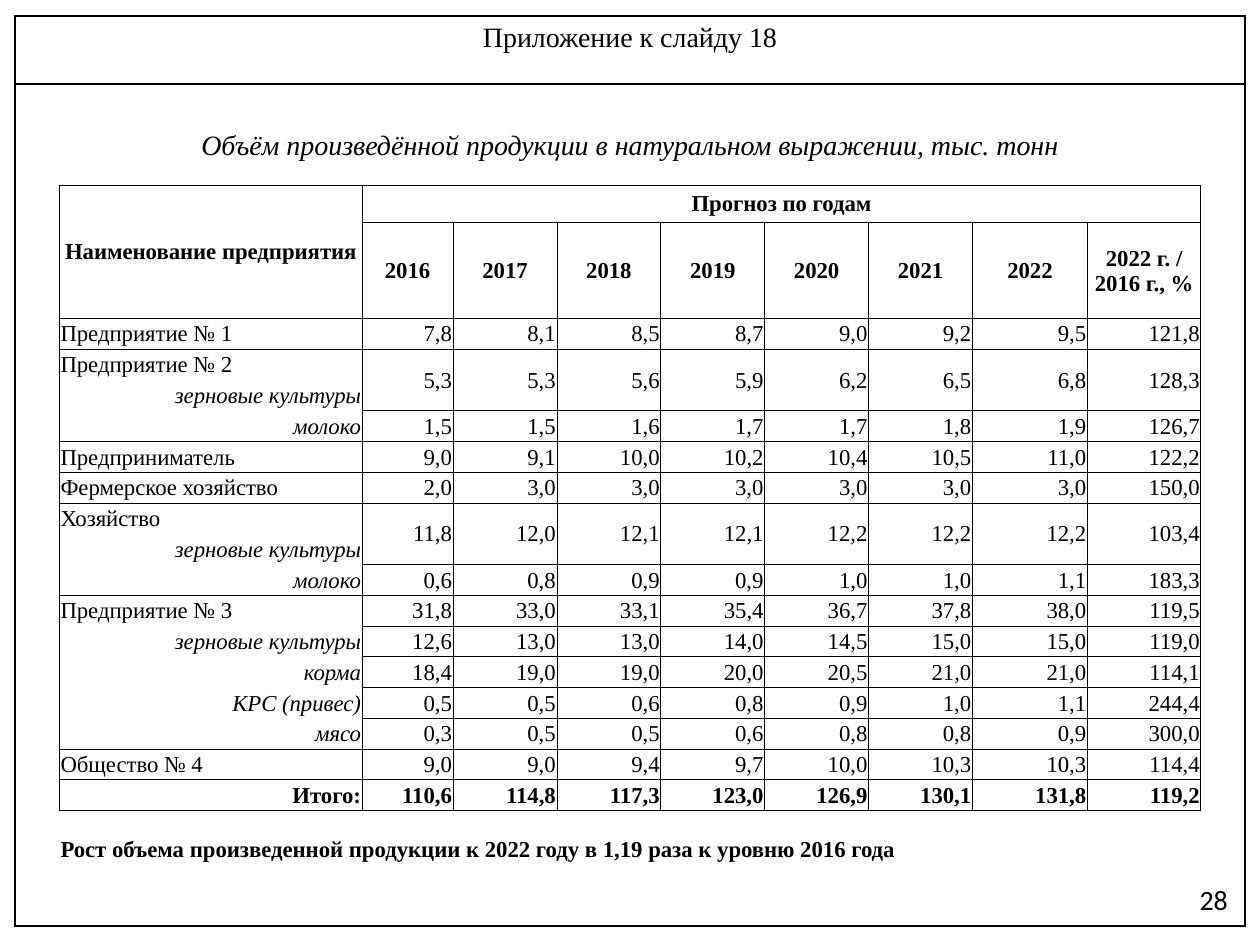
from lxml import etree
from pptx import Presentation
from pptx.dml.color import RGBColor
from pptx.enum.text import MSO_ANCHOR, PP_ALIGN
from pptx.oxml.ns import qn
from pptx.util import Pt

LEFT, MID, RIGHT = PP_ALIGN.LEFT, PP_ALIGN.CENTER, PP_ALIGN.RIGHT
TOP, CENTRE = MSO_ANCHOR.TOP, MSO_ANCHOR.MIDDLE
COLORS = {"ink": "000000"}
SERIF, SANS = "Times New Roman", "Calibri"

HEAD = "Приложение к слайду 18"
TITLE = "Объём произведённой продукции в натуральном выражении, тыс. тонн"
NAME = "Наименование предприятия"
SPAN = "Прогноз по годам"
YEARS = ["2016", "2017", "2018", "2019", "2020", "2021", "2022",
         "2022 г. / 2016 г., %"]
# Each firm: its name, its own values, then (product, values).
# A firm that shares the values of its first product has none of its own.
FIRMS = [
    ("Предприятие № 1", "7,8 8,1 8,5 8,7 9,0 9,2 9,5 121,8", []),
    ("Предприятие № 2", "", [
        ("зерновые культуры", "5,3 5,3 5,6 5,9 6,2 6,5 6,8 128,3"),
        ("молоко", "1,5 1,5 1,6 1,7 1,7 1,8 1,9 126,7")]),
    ("Предприниматель", "9,0 9,1 10,0 10,2 10,4 10,5 11,0 122,2", []),
    ("Фермерское хозяйство", "2,0 3,0 3,0 3,0 3,0 3,0 3,0 150,0", []),
    ("Хозяйство", "", [
        ("зерновые культуры", "11,8 12,0 12,1 12,1 12,2 12,2 12,2 103,4"),
        ("молоко", "0,6 0,8 0,9 0,9 1,0 1,0 1,1 183,3")]),
    ("Предприятие № 3", "31,8 33,0 33,1 35,4 36,7 37,8 38,0 119,5", [
        ("зерновые культуры", "12,6 13,0 13,0 14,0 14,5 15,0 15,0 119,0"),
        ("корма", "18,4 19,0 19,0 20,0 20,5 21,0 21,0 114,1"),
        ("КРС (привес)", "0,5 0,5 0,6 0,8 0,9 1,0 1,1 244,4"),
        ("мясо", "0,3 0,5 0,5 0,6 0,8 0,8 0,9 300,0")]),
    ("Общество № 4", "9,0 9,0 9,4 9,7 10,0 10,3 10,3 114,4", []),
]
TOTAL = ("Итого:", "110,6 114,8 117,3 123,0 126,9 130,1 131,8 119,2")
NOTE = "Рост объема произведенной продукции к 2022 году в 1,19 раза к уровню 2016 года"
PAGE = "28"

COLS = [173, 52] + [59.36] * 5 + [65.7, 64.8]
BODY = 1 + sum(1 + len(items) for _, _, items in FIRMS)
ROWS = [32.2, 21.3, 54.9] + [17.6] * BODY + [35.4]


def write(frame, text, align, size=13, font=SERIF, bold=False, italic=False):
    para = frame.paragraphs[0]
    para.alignment = align
    run = para.add_run()
    run.text = text
    look = {"size": Pt(size), "name": font, "bold": bold, "italic": italic}
    for key, value in look.items():
        setattr(run.font, key, value)
    run.font.color.rgb = RGBColor.from_string(COLORS["ink"])


def edge(cell, sides, width):
    """Draw the listed sides (of L, R, T, B) and clear the others."""
    cell.fill.background()
    props = cell._tc.get_or_add_tcPr()
    for spot, side in enumerate("LRTB"):
        line = etree.Element(qn("a:ln" + side), w=str(int(Pt(width))))
        if side in sides:
            fill = etree.SubElement(line, qn("a:solidFill"))
            etree.SubElement(fill, qn("a:srgbClr"), val=COLORS["ink"])
        else:
            etree.SubElement(line, qn("a:noFill"))
        props.insert(spot, line)


def grid(slide, left, top, cols, rows):
    shape = slide.shapes.add_table(len(rows), len(cols), Pt(left), Pt(top),
                                   Pt(sum(cols)), Pt(sum(rows)))
    table = shape.table
    table.first_row = table.horz_banding = False
    for col, width in zip(table.columns, cols):
        col.width = Pt(width)
    for row, height in zip(table.rows, rows):
        row.height = Pt(height)
    return table


def put(table, row, col, text, align=RIGHT, sides="LRTB", down=1, across=1,
        pad=(0.7, 0), **look):
    """Fill a cell, merged over the rows and columns it spans."""
    for r in range(row, row + down):
        for c in range(col, col + across):
            edge(table.cell(r, c), sides, 0.5)
    cell = table.cell(row, col)
    if down * across > 1:
        cell.merge(table.cell(row + down - 1, col + across - 1))
    form = {"vertical_anchor": CENTRE, "margin_left": Pt(0.7),
            "margin_right": Pt(0.7), "margin_top": Pt(pad[0]),
            "margin_bottom": Pt(pad[1])}
    for key, value in form.items():
        setattr(cell, key, value)
    write(cell.text_frame, text, align, **look)


def values(table, row, text, **look):
    for col, value in enumerate(text.split(), 1):
        put(table, row, col, value, **look)


def output(slide):
    table = grid(slide, 33.9, 73.6, COLS, ROWS)
    wide = len(COLS)
    put(table, 0, 0, TITLE, MID, "B", across=wide, pad=(0.7, 13),
        size=16, italic=True)
    put(table, 1, 0, NAME, MID, down=2, bold=True)
    put(table, 1, 1, SPAN, MID, across=wide - 1, bold=True)
    for col, year in enumerate(YEARS, 1):
        put(table, 2, col, year, MID, bold=True)
    row = 3
    for firm, own, items in FIRMS:
        put(table, row, 0, firm, LEFT, "LRT" if items else "LRTB")
        values(table, row, own)
        for step, (item, nums) in enumerate(items, 1):
            last = step == len(items)
            put(table, row + step, 0, item, sides="LRB" if last else "LR",
                italic=True)
            shared = step == 1 and not own
            values(table, row + step - shared, nums, down=1 + shared)
        row += 1 + len(items)
    put(table, row, 0, TOTAL[0], bold=True)
    values(table, row, TOTAL[1], bold=True)
    put(table, row + 1, 0, NOTE, LEFT, "T", across=wide, pad=(9.5, 0),
        bold=True)


def main():
    deck = Presentation()
    deck.slide_width, deck.slide_height = Pt(720), Pt(540)
    slide = deck.slides.add_slide(deck.slide_layouts[6])
    frame = grid(slide, 8.7, 9.2, [702.7], [38.9, 481])
    for row in range(2):
        edge(frame.cell(row, 0), "LRTB", 1)
    frame.cell(0, 0).vertical_anchor = TOP
    write(frame.cell(0, 0).text_frame, HEAD, MID, size=16)
    output(slide)
    box = slide.shapes.add_textbox(Pt(540.7), Pt(499.7), Pt(168), Pt(28.8))
    box.text_frame.word_wrap = True
    box.text_frame.vertical_anchor = CENTRE
    write(box.text_frame, PAGE, RIGHT, size=16, font=SANS)
    deck.save("out.pptx")


if __name__ == "__main__":
    main()
